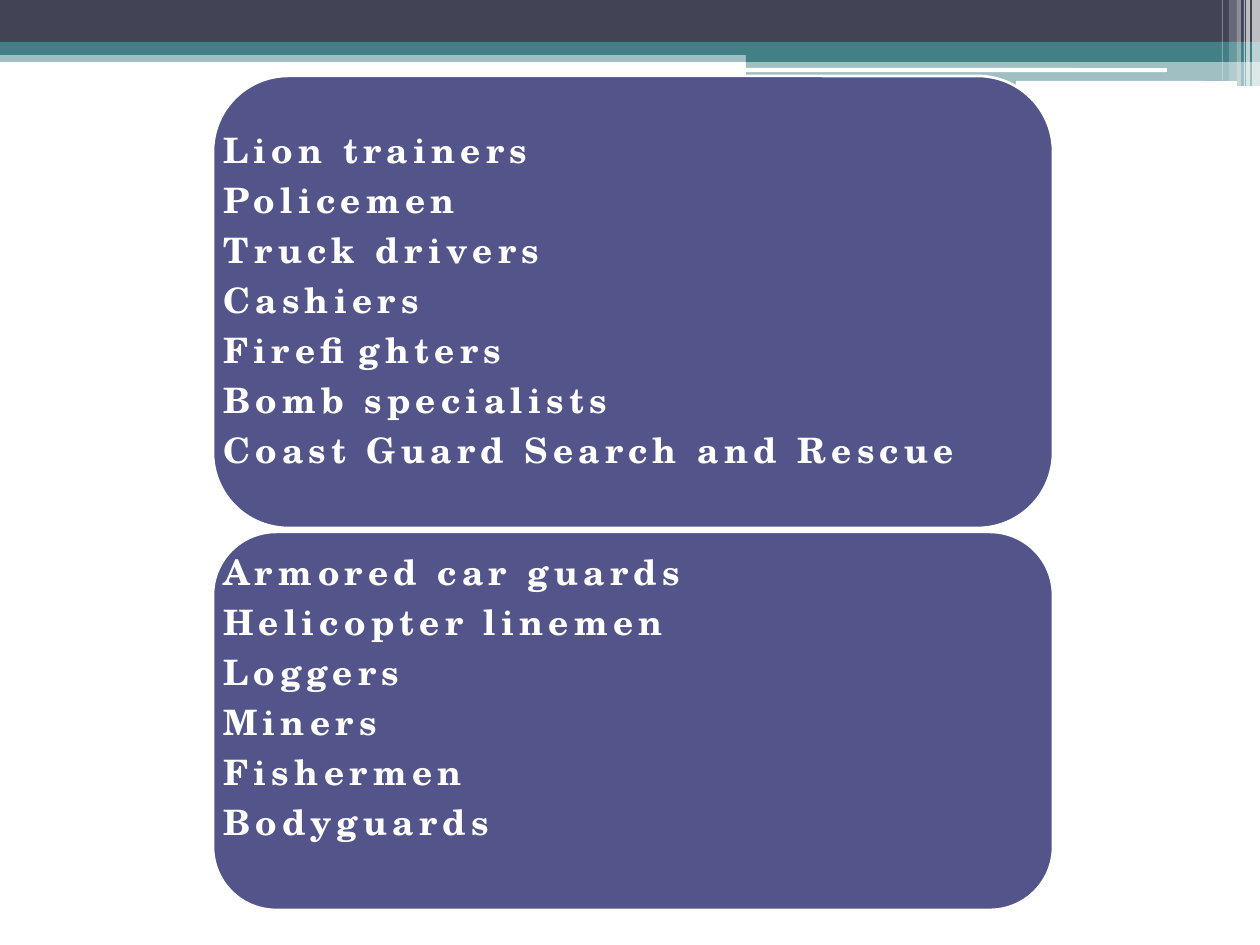
from dataclasses import dataclass

from lxml.etree import SubElement
from pptx import Presentation
from pptx.dml.color import RGBColor
from pptx.enum.shapes import MSO_SHAPE as Shape
from pptx.enum.text import MSO_ANCHOR as Anchor, MSO_AUTO_SIZE as AutoSize, PP_ALIGN as Align
from pptx.oxml.ns import qn
from pptx.util import Emu, Pt


@dataclass(frozen=True)
class Theme:
    navy: str = "424456"
    teal: str = "438086"
    white: str = "FFFFFF"
    panel: str = "53548A"
    font: str = "TeX Gyre Schola"
    size: int = 20
    tracking: int = 3
    space_after: int = 7
    outline: float = 1.5


theme = Theme()


def px(length):
    return Emu(round(length * 914400 / 126))


def add_block(kind, box, color, opacity=100):
    shape = slide.shapes.add_shape(kind, *map(px, box))
    shape.shadow.inherit = False
    shape.fill.solid()
    shape.fill.fore_color.rgb = RGBColor.from_string(color)
    shape.line.fill.background()
    if opacity < 100:
        fill_color = shape.element.spPr.find(".//" + qn("a:srgbClr"))
        SubElement(fill_color, qn("a:alpha")).set("val", str(opacity * 1000))
    return shape


presentation = Presentation()
presentation.slide_width, presentation.slide_height = px(1260), px(945)
slide = presentation.slides.add_slide(presentation.slide_layouts.get_by_name("Two Content"))

header_bars = [
    ((0, 50, 1260, 12), theme.teal, 50),
    ((0, 0, 1260, 43), theme.navy, 100),
    ((0, 42, 1260, 13), theme.teal, 100),
    ((746, 49, 514, 13), theme.teal, 100),
    ((746, 61, 514, 25), theme.teal, 50),
]
for box, color, opacity in header_bars:
    add_block(Shape.RECTANGLE, box, color, opacity)

for box in [(745, 68, 422, 4), (1016, 81, 221, 5)]:
    add_block(Shape.ROUNDED_RECTANGLE, box, theme.white)

corner_stripes = [
    (1252, 8, 86, 65),
    (1246, 4, 86, 65),
    (1244, 1, 86, 60),
    (1237, 4, 86, 40),
    (1229, 8, 81, 20),
    (1222, 1, 81, 30),
]
for left, width, height, opacity in corner_stripes:
    add_block(Shape.RECTANGLE, (left, 0, width, height), theme.white, opacity)

job_panels = [
    (1, 76, 452, 10, [
        "Lion trainers", "Policemen", "Truck drivers", "Cashiers", "Firefighters",
        "Bomb specialists", "Coast Guard Search and Rescue",
    ]),
    (2, 532, 378, 54, [
        "Armored car guards", "Helicopter linemen", "Loggers", "Miners",
        "Fishermen", "Bodyguards",
    ]),
]
placeholders = {item.placeholder_format.idx: item for item in slide.placeholders}
for index, top, height, bottom_inset, jobs in job_panels:
    box = (213, top, 840, height)
    panel = add_block(Shape.ROUNDED_RECTANGLE, box, theme.panel)
    panel.line.color.rgb = RGBColor.from_string(theme.white)
    panel.line.width = Pt(theme.outline)

    job_list = placeholders[index]
    job_list.left, job_list.top, job_list.width, job_list.height = map(px, box)
    panel.element.addnext(job_list.element)
    frame = job_list.text_frame
    frame.text = "\n".join(jobs)
    frame.word_wrap = True
    frame.auto_size = AutoSize.NONE
    frame.vertical_anchor = Anchor.MIDDLE
    frame.margin_left = frame.margin_right = frame.margin_top = px(10)
    frame.margin_bottom = px(bottom_inset)

    for paragraph in frame.paragraphs:
        paragraph.alignment = Align.LEFT
        paragraph.line_spacing = 0.9
        paragraph.space_before = Pt(0)
        paragraph.space_after = Pt(theme.space_after)
        paragraph.font.name = theme.font
        paragraph.font.size = Pt(theme.size)
        paragraph.font.bold = True
        paragraph.font.color.rgb = RGBColor.from_string(theme.white)
        properties = paragraph._p.get_or_add_pPr()
        properties.set("marL", "0")
        properties.set("indent", "0")
        character_defaults = properties.find(qn("a:defRPr"))
        character_defaults.set("spc", str(theme.tracking * 100))
        character_defaults.addprevious(SubElement(properties, qn("a:buNone")))

title = slide.shapes.title.element
title.getparent().remove(title)

presentation.save("out.pptx")
